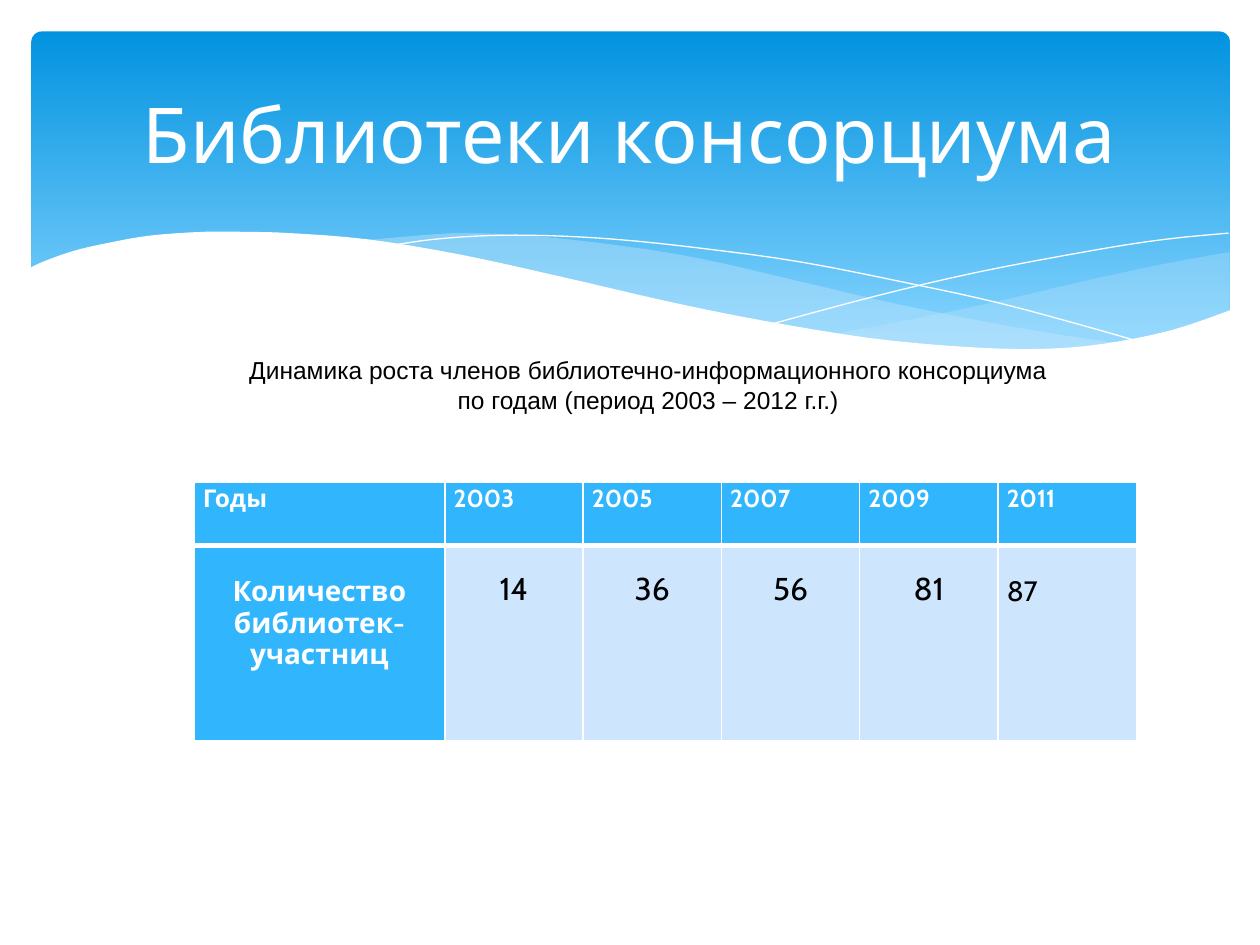
from dataclasses import dataclass
from itertools import chain

from lxml.etree import SubElement
from pptx import Presentation
from pptx.dml.color import RGBColor
from pptx.enum.shapes import MSO_SHAPE
from pptx.enum.text import MSO_ANCHOR, PP_ALIGN
from pptx.oxml.ns import qn
from pptx.util import Inches, Pt

COLS, ROWS = 100, 75
WIDTH, HEIGHT = Inches(10), Inches(7.5)


@dataclass(frozen=True)
class Theme:
    font: str = "Cabin"
    caption_font: str = "Arial"
    white: str = "FFFFFF"
    black: str = "000000"
    sky_top: str = "0293E0"
    sky_bottom: str = "83D3FE"
    veil: str = "C6E7FC"
    head: str = "31B6FD"
    body: str = "CEE5FE"
    title_size: int = 44
    value_size: int = 18
    label_size: int = 16
    small_size: int = 14
    leading: int = 18


T = Theme()

VEIL_RIGHT = [
    [(95.3, 1.6), (89.8, 2.6), (83.8, 3.9), (75.6, 5.8), (68.3, 7.3), (63.8, 8.1)],
    [(63.8, 8.1), (68.2, 8.7), (73.4, 9.2), (79.1, 9.4), (84, 9.2), (88.2, 8.5),
     (91.9, 7.5), (95.3, 6.3)],
]
VEIL_LEFT = [
    [(87, 8.9), (81.4, 8.1), (75.2, 7), (68.3, 5.6), (60.6, 3.8), (54.6, 2.4),
     (49.1, 1.4), (41.9, 0.5), (35.7, 0.1), (32.1, 0.2), (26.3, 0.7)],
    [(26.3, 0.7), (31.9, 1.5), (38.1, 2.7), (42.6, 3.8), (50.7, 5.6), (57.8, 7.1),
     (64.2, 8.2), (69.9, 9), (76.2, 9.4), (81.5, 9.4), (87, 8.9)],
]
LINE_FALLING = [
    [(28.6, 1.1), (32.1, 0.6), (36.4, 0.3), (41, 0.3), (46.6, 0.6), (53.3, 1.3),
     (61.3, 2.4), (70.4, 4.2), (77.2, 5.7), (84.6, 7.7), (88.4, 8.8)],
]
LINE_RISING = [
    [(59, 7.3), (67.2, 5.1), (75.3, 3.2), (84.3, 1.5), (90.1, 0.6), (95.2, 0.1)],
]
WHITE_WAVE = [
    [(0, 2.9), (1.3, 2.3), (3.6, 1.5), (6.2, 0.9), (9.6, 0.3), (13.8, 0), (17, 0),
     (20.7, 0.1), (26.9, 0.6), (34.2, 1.8), (42.4, 3.6), (50.6, 5.5), (58, 7),
     (66.5, 8.4), (73.8, 9.1), (80, 9.3), (85.2, 8.9), (90.7, 7.8), (95.4, 6.2)],
    [(95.4, 14.5)],
    [(0, 14.5)],
]

YEARS = ["Годы", "2003", "2005", "2007", "2009", "2011"]
COUNTS = ["Количество библиотек-участниц", "14", "36", "56", "81", "87"]


def rgb(color):
    return RGBColor.from_string(color)


def col(n):
    return round(WIDTH * n / COLS)


def row(n):
    return round(HEIGHT * n / ROWS)


def place(box):
    x, y, w, h = box
    return col(x), row(y), col(w), row(h)


def set_alpha(fill, percent):
    clr = fill._xPr.find(qn("a:solidFill"))[0]
    SubElement(clr, qn("a:alpha")).set("val", str(percent * 1000))


def write(p, text, *, size, font=T.font, color=T.white, bold=False,
          align=PP_ALIGN.CENTER, leading=None, indent=0):
    p.alignment = align
    if leading:
        p.line_spacing = Pt(leading)
    if indent:
        p._p.get_or_add_pPr().set("indent", str(col(indent)))
    r = p.add_run()
    r.text = text
    r.font.size, r.font.name, r.font.bold = Pt(size), font, bold
    r.font.color.rgb = rgb(color)


def text_box(s, box, lines, wrap=True, **fmt):
    tf = s.shapes.add_textbox(*place(box)).text_frame
    tf.word_wrap = wrap
    tf.vertical_anchor = MSO_ANCHOR.MIDDLE
    for i, line in enumerate(lines):
        write(tf.add_paragraph() if i else tf.paragraphs[0], line, **fmt)


def smooth_points(knots, steps=4):
    points = knots[:1]
    padded = knots[:1] + knots + knots[-1:]
    for a, b, c, d in zip(padded, padded[1:], padded[2:], padded[3:]):
        for t in (k / steps for k in range(1, steps + 1)):
            points.append(tuple(
                (2 * q + (r - p) * t + (2 * p - 5 * q + 4 * r - u) * t ** 2
                 + (3 * q - p - 3 * r + u) * t ** 3) / 2
                for p, q, r, u in zip(a, b, c, d)))
    return points


def wave(s, box, curves, fill=None, alpha=None):
    x, y = box[:2]
    points = [(col(x + px), row(y + py))
              for px, py in chain.from_iterable(map(smooth_points, curves))]
    fb = s.shapes.build_freeform(*points[0])
    fb.add_line_segments(points[1:], close=fill is not None)
    sp = fb.convert_to_shape()
    sp.shadow.inherit = False
    if fill is None:
        sp.fill.background()
        sp.line.color.rgb = rgb(T.white)
        sp.line.width = Pt(0)
        return
    sp.fill.solid()
    sp.fill.fore_color.rgb = rgb(fill)
    sp.line.fill.background()
    if alpha:
        set_alpha(sp.fill, alpha)


def banner(s, box):
    x, y, w, h = box
    sp = s.shapes.add_shape(MSO_SHAPE.ROUNDED_RECTANGLE, *place(box))
    sp.adjustments[0] = 0.03
    sp.shadow.inherit = False
    sp.line.fill.background()
    sp.fill.gradient()
    sp.fill.gradient_angle = 270
    for stop, color, pos in zip(sp.fill.gradient_stops, (T.sky_top, T.sky_bottom), (0, 0.9)):
        stop.color.rgb = rgb(color)
        stop.position = pos
    waves = (x - 0.2, y + 15.9)
    wave(s, waves, VEIL_RIGHT, T.veil, 29)
    wave(s, waves, VEIL_LEFT, T.veil, 40)
    wave(s, waves, LINE_FALLING)
    wave(s, waves, LINE_RISING)
    wave(s, waves, WHITE_WAVE, T.white)
    text_box(s, (x + 2.5, y + 1.2, w - 5.1, 13.7), ["Библиотеки консорциума"],
             size=T.title_size)


def caption(s, box):
    text_box(s, box, ["Динамика роста членов библиотечно-информационного консорциума",
                      "по годам (период 2003 – 2012 г.г.)"],
             wrap=False, size=T.small_size, font=T.caption_font, color=T.black, indent=2.5)


def set_borders(cell, **widths):
    tcPr = cell._tc.get_or_add_tcPr()
    for i, side in enumerate("LRTB"):
        ln = tcPr.makeelement(qn(f"a:ln{side}"), {"w": str(Pt(widths.get(side, 1)))})
        SubElement(SubElement(ln, qn("a:solidFill")), qn("a:srgbClr")).set("val", T.white)
        tcPr.insert(i, ln)


def fill_cell(cell, text, fill, top=0, borders=None, **fmt):
    cell.margin_left = cell.margin_right = col(0.7)
    cell.margin_top, cell.margin_bottom = Pt(top), 0
    cell.fill.solid()
    cell.fill.fore_color.rgb = rgb(fill)
    set_borders(cell, **(borders or {}))
    write(cell.text_frame.paragraphs[0], text, leading=T.leading, **fmt)


def members_table(s, box):
    w, h = box[2:]
    label_w, head_h = 19.9, 5
    table = s.shapes.add_table(2, len(YEARS), *place(box)).table
    for i, column in enumerate(table.columns):
        column.width = col((w - label_w) / (len(YEARS) - 1) if i else label_w)
    table.rows[0].height, table.rows[1].height = row(head_h), row(h - head_h)
    last = len(YEARS) - 1
    for i, (year, count) in enumerate(zip(YEARS, COUNTS)):
        fill_cell(table.cell(0, i), year, T.head, borders={"B": 3},
                  size=T.small_size, bold=True, align=PP_ALIGN.JUSTIFY)
        fill_cell(table.cell(1, i), count, T.body if i else T.head, top=T.leading,
                  borders={"T": 3}, bold=i == 0, color=T.black if i else T.white,
                  size=T.label_size if i in (0, last) else T.value_size,
                  align=PP_ALIGN.JUSTIFY if i == last else PP_ALIGN.CENTER)


def main():
    prs = Presentation()
    prs.slide_width, prs.slide_height = WIDTH, HEIGHT
    s = prs.slides.add_slide(prs.slide_layouts[6])
    banner(s, (2.5, 2.5, 95.1, 27))
    members_table(s, (15.4, 38.3, 74.8, 20.5))
    caption(s, (15.8, 27.7, 68.8, 5.7))
    prs.save("out.pptx")


if __name__ == "__main__":
    main()
